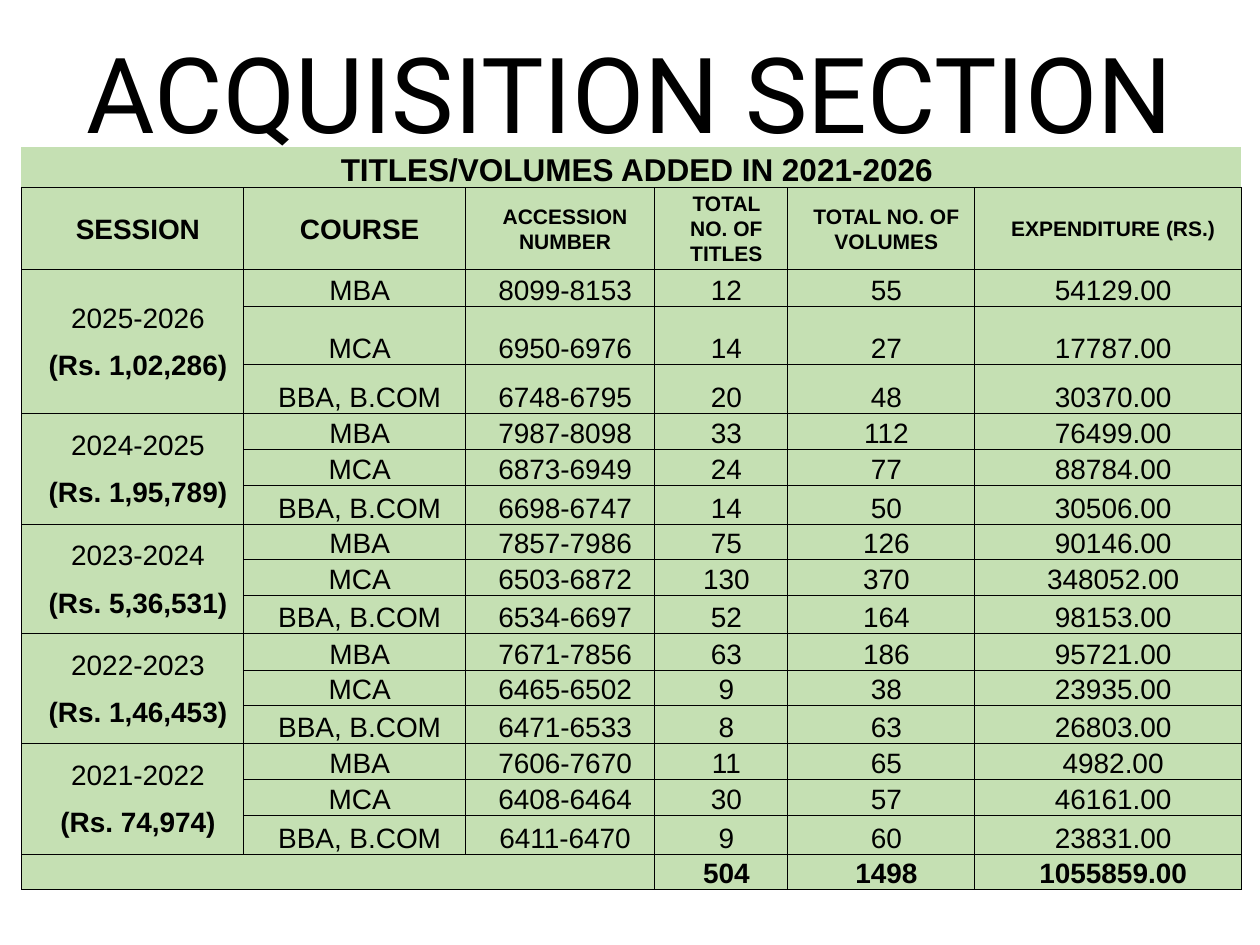
from dataclasses import dataclass

from lxml import etree
from pptx import Presentation
from pptx.dml.color import RGBColor
from pptx.enum.text import MSO_ANCHOR, MSO_AUTO_SIZE, PP_ALIGN
from pptx.oxml.ns import qn
from pptx.util import Inches, Pt

CENTER = PP_ALIGN.CENTER
MIDDLE = MSO_ANCHOR.MIDDLE
BOTTOM = MSO_ANCHOR.BOTTOM
NO_AUTOFIT = MSO_AUTO_SIZE.NONE
TITLE_ONLY = 5
EDGES = ("lnL", "lnR", "lnT", "lnB")


@dataclass(frozen=True)
class Theme:
    title_font: str = "Roboto"
    table_font: str = "Arial"
    ink: str = "000000"
    cell_fill: str = "C5E0B3"
    title_size: int = 60
    heading_size: int = 18
    body_size: int = 16
    small_size: int = 12
    border_width: float = 0.5


THEME = Theme()
COLUMN_WIDTHS = (1.76, 1.76, 1.5, 1.06, 1.48, 2.12)
ROW_HEIGHTS = (0.32, 0.65, 0.29, 0.46, 0.39, 0.29, 0.28, 0.31, 0.28,
               0.29, 0.3, 0.29, 0.28, 0.3, 0.29, 0.28, 0.31, 0.28)
HEADERS = ("SESSION", "COURSE", "ACCESSION NUMBER", "TOTAL NO. OF TITLES",
           "TOTAL NO. OF VOLUMES", "EXPENDITURE (RS.)")
COURSES = ("MBA", "MCA", "BBA, B.COM")
SESSIONS = (
    ("2025-2026", "(Rs. 1,02,286)", (
        ("8099-8153", "12", "55", "54129.00"),
        ("6950-6976", "14", "27", "17787.00"),
        ("6748-6795", "20", "48", "30370.00"))),
    ("2024-2025", "(Rs. 1,95,789)", (
        ("7987-8098", "33", "112", "76499.00"),
        ("6873-6949", "24", "77", "88784.00"),
        ("6698-6747", "14", "50", "30506.00"))),
    ("2023-2024", "(Rs. 5,36,531)", (
        ("7857-7986", "75", "126", "90146.00"),
        ("6503-6872", "130", "370", "348052.00"),
        ("6534-6697", "52", "164", "98153.00"))),
    ("2022-2023", "(Rs. 1,46,453)", (
        ("7671-7856", "63", "186", "95721.00"),
        ("6465-6502", "9", "38", "23935.00"),
        ("6471-6533", "8", "63", "26803.00"))),
    ("2021-2022", "(Rs. 74,974)", (
        ("7606-7670", "11", "65", "4982.00"),
        ("6408-6464", "30", "57", "46161.00"),
        ("6411-6470", "9", "60", "23831.00"))),
)
TOTALS = ("504", "1498", "1055859.00")


def format_run(run, font_name, size, bold=False):
    run.font.name = font_name
    run.font.size = Pt(size)
    run.font.bold = bold
    run.font.color.rgb = RGBColor.from_string(THEME.ink)


def add_title(slide, text):
    title = slide.shapes.title
    title.left, title.top = Inches(0.5), Inches(0.1)
    title.width, title.height = Inches(9), Inches(1.25)
    frame = title.text_frame
    frame.text = text
    frame.word_wrap = True
    frame.auto_size = NO_AUTOFIT
    frame.vertical_anchor = MIDDLE
    paragraph = frame.paragraphs[0]
    paragraph.alignment = CENTER
    format_run(paragraph.runs[0], THEME.title_font, THEME.title_size)


def set_borders(cell, visible_edges):
    properties = cell._tc.get_or_add_tcPr()
    for edge in EDGES:
        line = etree.SubElement(properties, qn(f"a:{edge}"), w=str(Pt(THEME.border_width)))
        if edge in visible_edges:
            fill = etree.SubElement(line, qn("a:solidFill"))
            etree.SubElement(fill, qn("a:srgbClr"), val=THEME.ink)
        else:
            etree.SubElement(line, qn("a:noFill"))


def prepare_cell(cell, visible_edges):
    set_borders(cell, visible_edges)
    cell.fill.solid()
    cell.fill.fore_color.rgb = RGBColor.from_string(THEME.cell_fill)
    cell.margin_left = cell.margin_right = Inches(0.07)
    cell.margin_top = cell.margin_bottom = 0
    end_properties = cell.text_frame.paragraphs[0]._p.get_or_add_endParaRPr()
    end_properties.set("sz", str(THEME.small_size * 100))


def write_cell(cell, lines, size=THEME.body_size, anchor=BOTTOM):
    cell.vertical_anchor = anchor
    frame = cell.text_frame
    frame.text = "\n".join(text for text, _ in lines)
    for paragraph, (_, bold) in zip(frame.paragraphs, lines):
        paragraph.alignment = CENTER
        paragraph.line_spacing = 1.07
        paragraph.space_after = Pt(8)
        paragraph._p.get_or_add_pPr().set("marL", str(Inches(0.09)))
        format_run(paragraph.runs[0], THEME.table_font, size, bold)


def add_acquisition_table(slide):
    row_count, column_count = len(ROW_HEIGHTS), len(COLUMN_WIDTHS)
    frame = slide.shapes.add_table(
        row_count, column_count, Inches(0.17), Inches(1.17),
        Inches(sum(COLUMN_WIDTHS)), Inches(sum(ROW_HEIGHTS)))
    table = frame.table
    table.first_row = table.horz_banding = False
    for column, width in zip(table.columns, COLUMN_WIDTHS):
        column.width = Inches(width)
    for index, (row, height) in enumerate(zip(table.rows, ROW_HEIGHTS)):
        row.height = Inches(height)
        for cell in row.cells:
            prepare_cell(cell, EDGES if index else ("lnB",))
    return table


def fill_headers(table):
    table.cell(0, 0).merge(table.cell(0, len(HEADERS) - 1))
    write_cell(table.cell(0, 0), [("TITLES/VOLUMES ADDED IN 2021-2026", True)],
               THEME.heading_size)
    for column, header in enumerate(HEADERS):
        size = THEME.body_size if column < 2 else THEME.small_size
        write_cell(table.cell(1, column), [(header, True)], size, MIDDLE)


def fill_sessions(table):
    for index, (session, amount, records) in enumerate(SESSIONS):
        first_row = 2 + index * len(COURSES)
        session_cell = table.cell(first_row, 0)
        session_cell.merge(table.cell(first_row + len(COURSES) - 1, 0))
        write_cell(session_cell, [(session, False), (amount, True)], anchor=MIDDLE)
        for offset, (course, record) in enumerate(zip(COURSES, records)):
            for column, value in enumerate((course, *record), start=1):
                write_cell(table.cell(first_row + offset, column), [(value, False)])


def fill_totals(table):
    last_row = len(ROW_HEIGHTS) - 1
    table.cell(last_row, 0).merge(table.cell(last_row, 2))
    for column, total in enumerate(TOTALS, start=3):
        write_cell(table.cell(last_row, column), [(total, True)])


def main():
    presentation = Presentation()
    presentation.slide_width = Inches(10)
    presentation.slide_height = Inches(7.5)
    slide = presentation.slides.add_slide(presentation.slide_layouts[TITLE_ONLY])
    add_title(slide, "ACQUISITION SECTION")
    table = add_acquisition_table(slide)
    fill_headers(table)
    fill_sessions(table)
    fill_totals(table)
    presentation.save("out.pptx")


if __name__ == "__main__":
    main()
